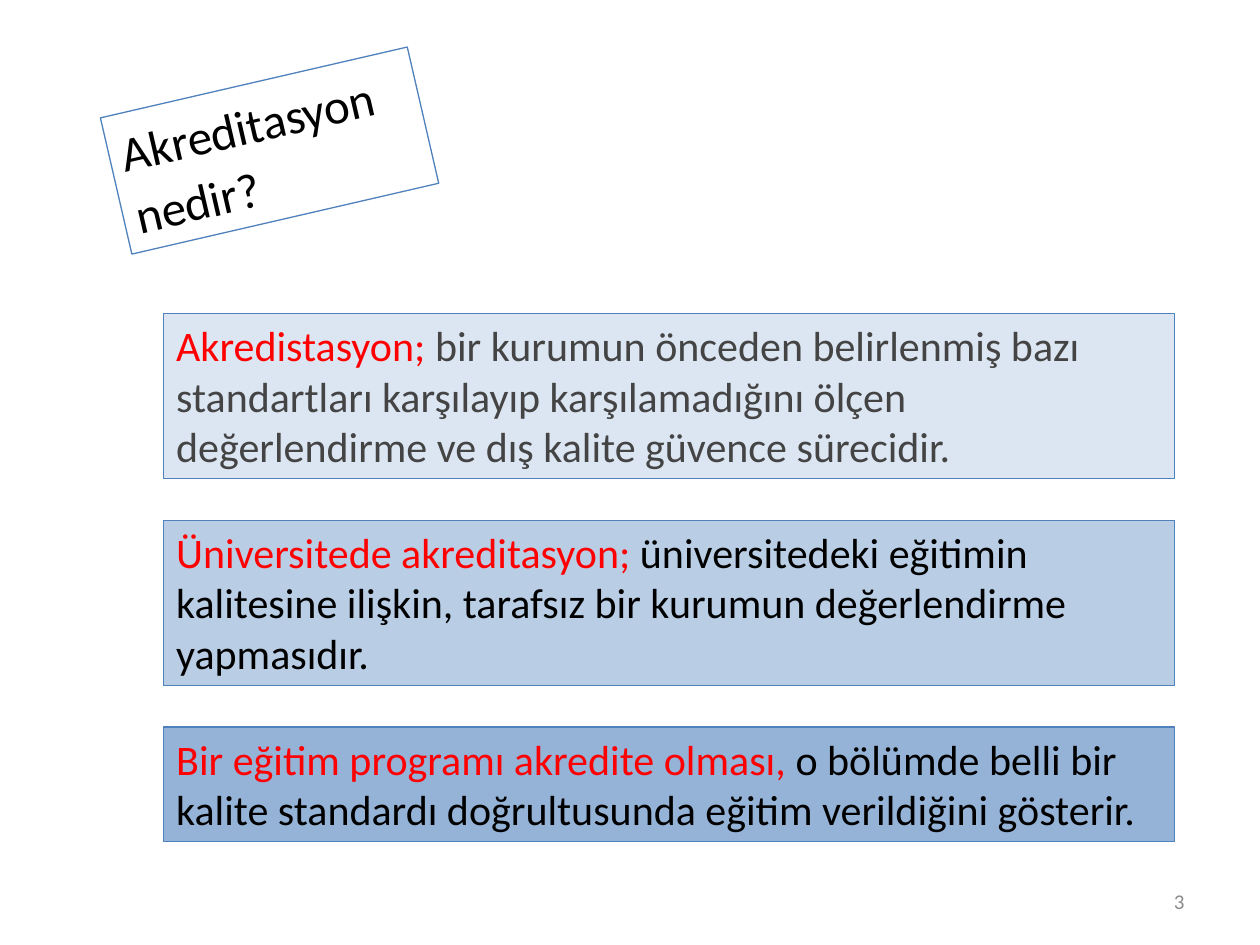
"""Builds the slide that explains what accreditation is."""
from pptx import Presentation
from pptx.dml.color import RGBColor
from pptx.enum import shapes, text
from pptx.util import Inches, Pt

COLORS = {
    "line": "4F81BD", "term": "FF0000", "grey": "444444", "black": "000000",
    "number": "8C8C8C", "light": "DCE6F2", "medium": "B9CDE5", "deep": "95B3D7",
}
TITLE = "Akreditasyon nedir?"
PAGE_NUMBER = "3"
DEFINITIONS = [
    ("Akredistasyon; ",
     "bir kurumun önceden belirlenmiş bazı standartları karşılayıp "
     "karşılamadığını ölçen değerlendirme ve dış kalite güvence sürecidir.",
     "light", "grey", 1.31),
    ("Üniversitede akreditasyon; ",
     "üniversitedeki eğitimin kalitesine ilişkin, tarafsız bir kurumun "
     "değerlendirme yapmasıdır.",
     "medium", "black", 1.31),
    ("Bir eğitim programı akredite olması, ",
     "o bölümde belli bir kalite standardı doğrultusunda eğitim verildiğini "
     "gösterir.",
     "deep", "black", 0.91),
]
LEFT, FIRST_TOP, WIDTH, GAP = 1.3, 2.49, 8.02, 0.33


def color(name):
    return RGBColor.from_string(COLORS[name])


def add_panel(slide, left, top, width, height, fill=None):
    panel = slide.shapes.add_shape(
        shapes.MSO_SHAPE.RECTANGLE,
        Inches(left), Inches(top), Inches(width), Inches(height))
    panel.shadow.inherit = False
    if fill:
        panel.fill.solid()
        panel.fill.fore_color.rgb = color(fill)
    else:
        panel.fill.background()
    panel.line.color.rgb = color("line")
    panel.line.width = Pt(0.75)
    panel.text_frame.auto_size = text.MSO_AUTO_SIZE.SHAPE_TO_FIT_TEXT
    return panel


def write(frame, size, parts, align=text.PP_ALIGN.LEFT,
          anchor=text.MSO_ANCHOR.TOP):
    frame.word_wrap = True
    frame.vertical_anchor = anchor
    paragraph = frame.paragraphs[0]
    paragraph.alignment = align
    paragraph.font.name = "Calibri"
    paragraph.font.size = Pt(size)
    for words, tone in parts:
        run = paragraph.add_run()
        run.text = words
        run.font.color.rgb = color(tone)
    return paragraph


def main():
    deck = Presentation()
    deck.slide_width, deck.slide_height = Inches(10), Inches(7.5)
    slide = deck.slides.add_slide(deck.slide_layouts[6])

    title = add_panel(slide, 0.89, 0.64, 2.5, 1.11)
    title.rotation = 347
    heading = write(title.text_frame, 28, [(TITLE, "black")])
    heading.line_spacing = 1.07
    heading.space_after = Pt(8)

    top = FIRST_TOP
    for term, meaning, fill, tone, height in DEFINITIONS:
        definition = add_panel(slide, LEFT, top, WIDTH, height, fill)
        write(definition.text_frame, 24, [(term, "term"), (meaning, tone)])
        top += height + GAP

    page = slide.shapes.add_textbox(
        Inches(7.17), Inches(6.95), Inches(2.33), Inches(0.4))
    write(page.text_frame, 12, [(PAGE_NUMBER, "number")],
          text.PP_ALIGN.RIGHT, text.MSO_ANCHOR.MIDDLE)

    deck.save("out.pptx")


if __name__ == "__main__":
    main()
